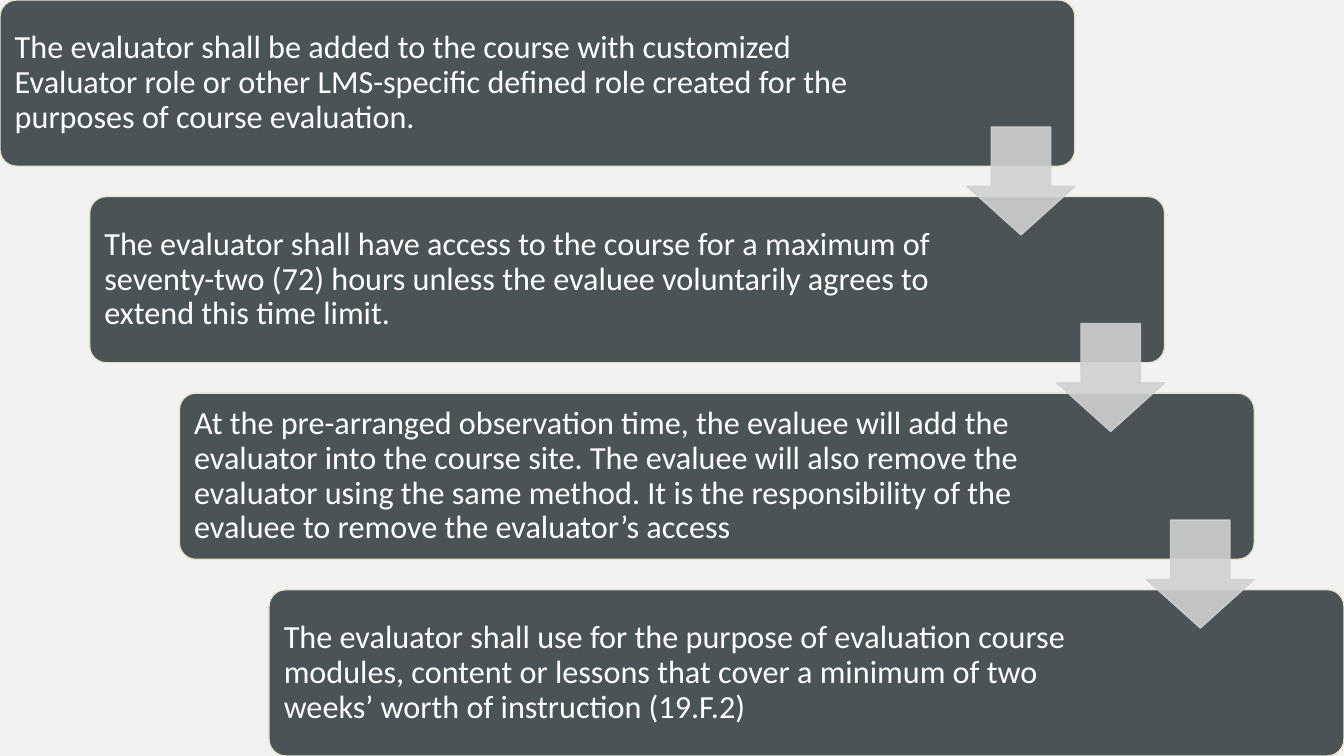
"""Build a slide with four descending steps of course evaluation access."""
from lxml import etree
from pptx import Presentation
from pptx.dml.color import RGBColor
from pptx.enum.shapes import MSO_SHAPE
from pptx.enum.text import MSO_ANCHOR, PP_ALIGN
from pptx.oxml.ns import qn
from pptx.util import Cm, Pt

STEP_SHAPE = MSO_SHAPE.ROUNDED_RECTANGLE
ARROW_SHAPE = MSO_SHAPE.DOWN_ARROW
MIDDLE = MSO_ANCHOR.MIDDLE
LEFT = PP_ALIGN.LEFT

BACKGROUND = RGBColor(0xF2, 0xF2, 0xF2)
SLATE = RGBColor(0x4A, 0x53, 0x56)
CREAM = RGBColor(0xE8, 0xE3, 0xCE)
SILVER = RGBColor(0xD0, 0xD1, 0xD1)
WHITE = RGBColor(0xFF, 0xFF, 0xFF)

STEPS = [
    "The evaluator shall be added to the course with customized Evaluator role "
    "or other LMS-specific defined role created for the purposes of course evaluation.",
    "The evaluator shall have access to the course for a maximum of seventy-two (72) "
    "hours unless the evaluee voluntarily agrees to extend this time limit.",
    "At the pre-arranged observation time, the evaluee will add the evaluator into "
    "the course site. The evaluee will also remove the evaluator using the same method. "
    "It is the responsibility of the evaluee to remove the evaluator’s access",
    "The evaluator shall use for the purpose of evaluation course modules, content or "
    "lessons that cover a minimum of two weeks’ worth of instruction (19.F.2)",
]

SLIDE_W, SLIDE_H = 33.87, 19.05
STEP_W, STEP_H = 27.09, 4.19
ARROW_SIZE, ARROW_TOP = 2.72, 3.2
SHIFT_X = (SLIDE_W - STEP_W) / (len(STEPS) - 1)
SHIFT_Y = (SLIDE_H - STEP_H) / (len(STEPS) - 1)

FRAME_FORMAT = {
    "word_wrap": True,
    "vertical_anchor": MIDDLE,
    "margin_left": Cm(0.25),
    "margin_right": Cm(5.2),
    "margin_top": Cm(0.25),
    "margin_bottom": Cm(0.25),
}
PARAGRAPH_FORMAT = {"alignment": LEFT, "line_spacing": 0.9}
FONT_FORMAT = {"name": "Calibri", "size": Pt(23)}


def apply_format(target, values):
    """Set every attribute in values on target."""
    for attribute, value in values.items():
        setattr(target, attribute, value)


def add_block(slide, kind, box, fill, line, adjustments):
    """Add a flat preset shape at a box given in centimetres."""
    block = slide.shapes.add_shape(kind, *(Cm(length) for length in box))
    block.shadow.inherit = False
    block.fill.solid()
    block.fill.fore_color.rgb = fill
    block.line.color.rgb = line
    block.line.width = Pt(1)
    for index, value in enumerate(adjustments):
        block.adjustments[index] = value
    return block


def add_step(slide, index, wording):
    """Add one step of the staircase with its wording."""
    box = (index * SHIFT_X, index * SHIFT_Y, STEP_W, STEP_H)
    step = add_block(slide, STEP_SHAPE, box, SLATE, CREAM, [0.1])
    frame = step.text_frame
    frame.text = wording
    paragraph = frame.paragraphs[0]
    font = paragraph.runs[0].font
    apply_format(frame, FRAME_FORMAT)
    apply_format(paragraph, PARAGRAPH_FORMAT)
    apply_format(font, FONT_FORMAT)
    font.color.rgb = WHITE


def add_arrow(slide, index):
    """Add the translucent arrow leading down from a step."""
    left = index * SHIFT_X + STEP_W - ARROW_SIZE
    box = (left, index * SHIFT_Y + ARROW_TOP, ARROW_SIZE, ARROW_SIZE)
    arrow = add_block(slide, ARROW_SHAPE, box, SILVER, SILVER, [0.55, 0.45])
    for color in arrow.element.spPr.iter(qn("a:srgbClr")):
        etree.SubElement(color, qn("a:alpha"), val="90000")


def main():
    """Build and save the slide."""
    deck = Presentation()
    deck.slide_width, deck.slide_height = Cm(SLIDE_W), Cm(SLIDE_H)
    slide = deck.slides.add_slide(deck.slide_layouts.get_by_name("Blank"))
    slide.background.fill.solid()
    slide.background.fill.fore_color.rgb = BACKGROUND
    for index, wording in enumerate(STEPS):
        add_step(slide, index, wording)
    for index in range(len(STEPS) - 1):
        add_arrow(slide, index)
    deck.save("out.pptx")


if __name__ == "__main__":
    main()
